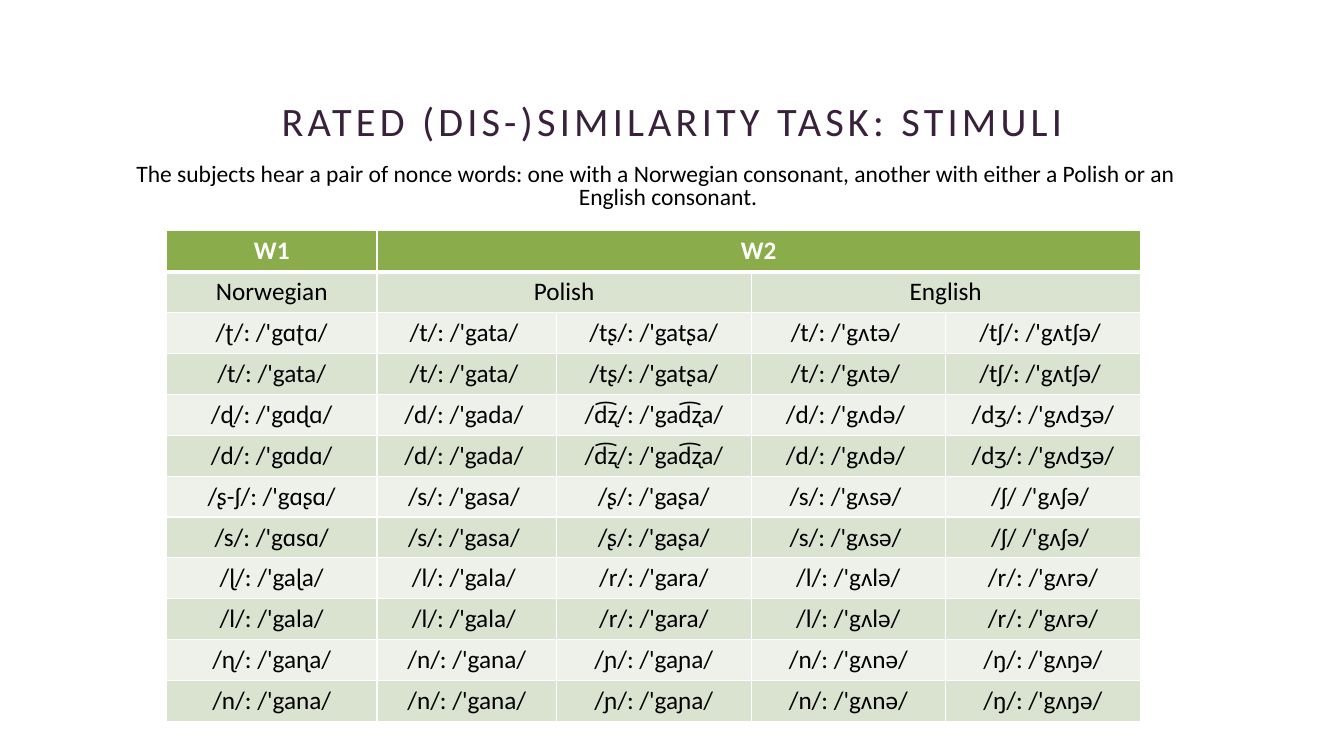
from dataclasses import dataclass

from lxml import etree
from pptx import Presentation
from pptx.dml.color import RGBColor
from pptx.enum.text import MSO_ANCHOR, MSO_AUTO_SIZE, PP_ALIGN
from pptx.oxml.ns import qn
from pptx.util import Inches, Pt

CENTER = PP_ALIGN.CENTER
TOP, BOTTOM = MSO_ANCHOR.TOP, MSO_ANCHOR.BOTTOM
NO_AUTOFIT = MSO_AUTO_SIZE.NONE

FONT = "Calibri"
COLORS = {
    "title": "39213B",
    "text": "000000",
    "white": "FFFFFF",
    "header": "8AAC4A",
    "dark_band": "DAE3D0",
    "light_band": "EDF1E9",
}
COLUMN_WIDTHS = (2.09, 1.78, 1.93, 1.93, 1.93)
TABLE_LEFT, TABLE_TOP, TABLE_HEIGHT = 1.65, 2.29, 4.87


@dataclass(frozen=True)
class Contrast:
    """Two Norwegian words that are paired with the same second words."""
    norwegian: tuple[str, str]
    polish: tuple[str, str]
    english: tuple[str, str]


@dataclass(frozen=True)
class Heading:
    row: int
    first_column: int
    last_column: int
    text: str


HEADINGS = (
    Heading(0, 0, 0, "W1"),
    Heading(0, 1, 4, "W2"),
    Heading(1, 0, 0, "Norwegian"),
    Heading(1, 1, 2, "Polish"),
    Heading(1, 3, 4, "English"),
)
CONTRASTS = (
    Contrast(("/ʈ/: /'gɑʈɑ/", "/t/: /'gata/"),
             ("/t/: /'gata/ ", "/tʂ/: /'gatʂa/"),
             ("/t/: /'gʌtə/ ", "/tʃ/: /'gʌtʃə/ ")),
    Contrast(("/ɖ/: /'gɑɖɑ/", "/d/: /'gɑdɑ/"),
             ("/d/: /'gada/ ", "/d͡ʐ/: /'gad͡ʐa/"),
             ("/d/: /'gʌdə/ ", "/dʒ/: /'gʌdʒə/")),
    Contrast(("/ʂ-ʃ/: /'gɑʂɑ/", "/s/: /'gɑsɑ/"),
             ("/s/: /'gasa/ ", "/ʂ/: /'gaʂa/"),
             ("/s/: /'gʌsə/ ", "/ʃ/ /'gʌʃə/ ")),
    Contrast(("/ɭ/: /'gaɭa/", "/l/: /'gala/"),
             ("/l/: /'gala/ ", "/r/: /'gara/"),
             ("/l/: /'gʌlə/", "/r/: /'gʌrə/")),
    Contrast(("/ɳ/: /'gaɳa/", "/n/: /'gana/"),
             ("/n/: /'gana/", "/ɲ/: /'gaɲa/"),
             ("/n/: /'gʌnə/", "/ŋ/: /'gʌŋə/")),
)


def write_text(text_frame, text: str, *, size: float, color: str = "text",
               bold: bool = False, line_spacing: float = 1.0,
               space_before: float = 0, letter_spacing: float = 0):
    """Write one centred paragraph and return it."""
    paragraph = text_frame.paragraphs[0]
    paragraph.alignment = CENTER
    paragraph.line_spacing = line_spacing
    paragraph.space_before = Pt(space_before)
    run = paragraph.add_run()
    run.text = text
    run.font.name = FONT
    run.font.size = Pt(size)
    run.font.bold = bold
    run.font.color.rgb = RGBColor.from_string(COLORS[color])
    if letter_spacing:
        run._r.get_or_add_rPr().set("spc", str(int(letter_spacing * 100)))
    return paragraph


def place(shape, left: float, top: float, width: float, height: float, anchor) -> None:
    shape.left, shape.top = Inches(left), Inches(top)
    shape.width, shape.height = Inches(width), Inches(height)
    text_frame = shape.text_frame
    text_frame.word_wrap = True
    text_frame.auto_size = NO_AUTOFIT
    text_frame.vertical_anchor = anchor


def hang_without_bullet(paragraph, indent: float) -> None:
    properties = paragraph._p.get_or_add_pPr()
    properties.set("marL", str(Inches(indent)))
    properties.set("indent", str(-Inches(indent)))
    etree.SubElement(properties, qn("a:buNone"))


def set_borders(cell, widths: dict[str, float]) -> None:
    """Add white borders, which must come before the fill in the cell."""
    properties = cell._tc.get_or_add_tcPr()
    for position, (side, width) in enumerate(widths.items()):
        line = etree.Element(qn(f"a:ln{side}"), w=str(Pt(width)))
        fill = etree.SubElement(line, qn("a:solidFill"))
        etree.SubElement(fill, qn("a:srgbClr"), val=COLORS["white"])
        properties.insert(position, line)


def format_cell(cell, row: int) -> None:
    band = "header" if row == 0 else "dark_band" if row % 2 else "light_band"
    cell.fill.solid()
    cell.fill.fore_color.rgb = RGBColor.from_string(COLORS[band])
    set_borders(cell, {"L": 1, "R": 1, "T": 3 if row == 1 else 1,
                       "B": 3 if row == 0 else 1})


def add_stimuli_table(slide) -> None:
    row_count = 2 + 2 * len(CONTRASTS)
    table = slide.shapes.add_table(
        row_count, len(COLUMN_WIDTHS), Inches(TABLE_LEFT), Inches(TABLE_TOP),
        Inches(sum(COLUMN_WIDTHS)), Inches(TABLE_HEIGHT)).table
    for column, width in zip(table.columns, COLUMN_WIDTHS):
        column.width = Inches(width)
    for row_index, row in enumerate(table.rows):
        row.height = Inches(TABLE_HEIGHT / row_count)
        for cell in row.cells:
            format_cell(cell, row_index)

    for heading in HEADINGS:
        cell = table.cell(heading.row, heading.first_column)
        if heading.last_column > heading.first_column:
            cell.merge(table.cell(heading.row, heading.last_column))
        is_top = heading.row == 0
        write_text(cell.text_frame, heading.text, size=18, bold=is_top,
                   color="white" if is_top else "text")

    stimuli = [(word, *contrast.polish, *contrast.english)
               for contrast in CONTRASTS for word in contrast.norwegian]
    for row_index, words in enumerate(stimuli, start=2):
        for column_index, word in enumerate(words):
            write_text(table.cell(row_index, column_index).text_frame, word, size=18)


def main() -> None:
    presentation = Presentation()
    presentation.slide_width, presentation.slide_height = Inches(13.33), Inches(7.5)
    slide = presentation.slides.add_slide(presentation.slide_layouts[1])

    title = slide.shapes.title
    place(title, 1.48, 0.7, 10.38, 0.79, BOTTOM)
    write_text(title.text_frame, "RATED (DIS-)SIMILARITY TASK: STIMULI", size=28.8,
               color="title", line_spacing=0.9, letter_spacing=3)

    body = slide.placeholders[1]
    place(body, 1.25, 1.58, 10.5, 0.58, TOP)
    introduction = write_text(
        body.text_frame,
        "The subjects hear a pair of nonce words: one with a Norwegian consonant, "
        "another with either a Polish or an English consonant.",
        size=16.8, line_spacing=0.8, space_before=10)
    hang_without_bullet(introduction, 0.25)

    add_stimuli_table(slide)
    presentation.save("out.pptx")


if __name__ == "__main__":
    main()
